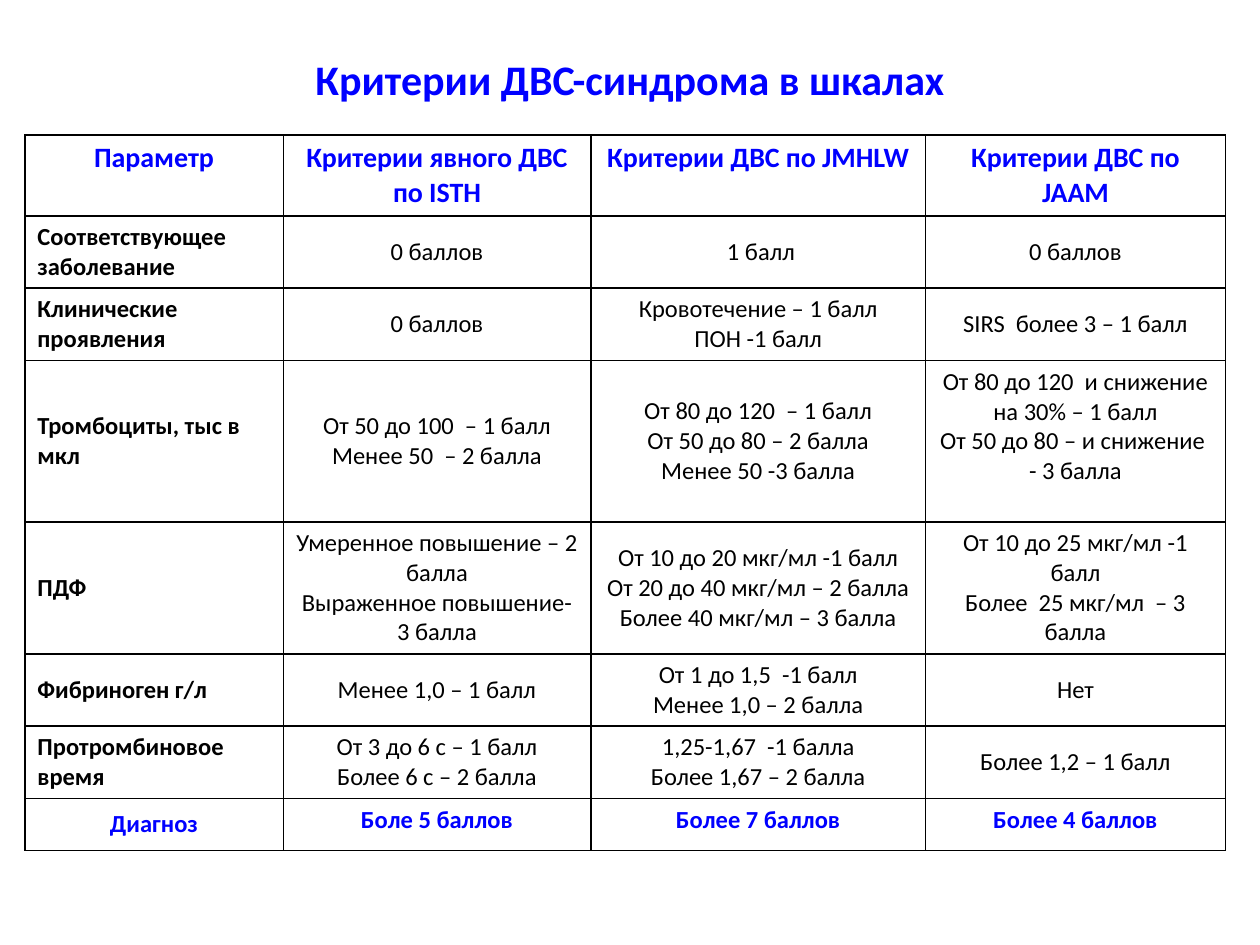
from lxml.etree import SubElement
from pptx import Presentation
from pptx.dml.color import RGBColor
from pptx.enum.text import MSO_ANCHOR as Anchor, PP_ALIGN as Align
from pptx.oxml.ns import qn
from pptx.util import Cm, Pt

BLUE = RGBColor(0x00, 0x00, 0xFF)
BLACK = RGBColor(0x00, 0x00, 0x00)

TITLE = "Критерии ДВС-синдрома в шкалах"
COLUMN_WIDTHS = [5.21, 6.2, 6.75, 6.04]
ROW_HEIGHTS = [1.63, 1.46, 1.46, 3.25, 2.66, 1.46, 1.46, 1.04]
# A line break inside a cell starts a new paragraph.
CRITERIA = [
    ["Параметр", "Критерии явного ДВС по ISTH", "Критерии ДВС по JMHLW",
     "Критерии ДВС по JAAM"],
    ["Соответствующее заболевание", "0 баллов", " 1 балл", "0 баллов"],
    ["Клинические проявления", "0 баллов",
     "Кровотечение – 1 балл\nПОН -1 балл", "SIRS  более 3 – 1 балл"],
    ["Тромбоциты, тыс в мкл",
     "От 50 до 100  – 1 балл\nМенее 50  – 2 балла",
     "От 80 до 120  – 1 балл\nОт 50 до 80 – 2 балла\nМенее 50 -3 балла",
     "От 80 до 120  и снижение на 30% – 1 балл\n"
     "От 50 до 80 – и снижение  - 3 балла"],
    ["ПДФ",
     "Умеренное повышение – 2 балла\nВыраженное повышение- 3 балла",
     "От 10 до 20 мкг/мл -1 балл\nОт 20 до 40 мкг/мл – 2 балла\n"
     "Более 40 мкг/мл – 3 балла",
     "От 10 до 25 мкг/мл -1 балл\nБолее  25 мкг/мл  – 3 балла"],
    ["Фибриноген г/л", "Менее 1,0 – 1 балл",
     "От 1 до 1,5  -1 балл\nМенее 1,0 – 2 балла", "Нет"],
    ["Протромбиновое время",
     "От 3 до 6 с – 1 балл\nБолее 6 с – 2 балла",
     "1,25-1,67  -1 балла\nБолее 1,67 – 2 балла", "Более 1,2 – 1 балл"],
    ["Диагноз", "Боле 5 баллов", "Более 7 баллов", "Более 4 баллов"],
]
HEADER, PLATELETS, DIAGNOSIS = 0, 3, len(CRITERIA) - 1
JAAM = 3


class SlideBuilder:
    font = "Calibri"
    border = Pt(1)

    def __init__(self, slide):
        self.slide = slide

    def add_text(self, frame, text, size, color=BLACK, bold=False, align=Align.CENTER):
        frame.word_wrap = True
        for index, line in enumerate(text.split("\n")):
            para = frame.add_paragraph() if index else frame.paragraphs[0]
            para.alignment = align
            span = para.add_run()
            span.text = line
            span.font.name = self.font
            span.font.size = Pt(size)
            span.font.bold = bold
            span.font.color.rgb = color

    def title(self, text, left, top, width, height):
        box = self.slide.shapes.add_textbox(Cm(left), Cm(top), Cm(width), Cm(height))
        box.text_frame.vertical_anchor = Anchor.MIDDLE
        self.add_text(box.text_frame, text, 24, BLUE, bold=True)

    def outline(self, cell):
        """Draw a black line on all four sides of the cell."""
        properties = cell._tc.get_or_add_tcPr()
        for side in ("a:lnL", "a:lnR", "a:lnT", "a:lnB"):
            line = SubElement(properties, qn(side), w=str(self.border))
            fill = SubElement(line, qn("a:solidFill"))
            SubElement(fill, qn("a:srgbClr"), val=str(BLACK))

    def table(self, rows, widths, heights, left, top):
        frame = self.slide.shapes.add_table(
            len(rows), len(widths), Cm(left), Cm(top), Cm(sum(widths)), Cm(sum(heights)))
        table = frame.table
        table.first_row = table.horz_banding = False
        for column, width in zip(table.columns, widths):
            column.width = Cm(width)
        for row, height in zip(table.rows, heights):
            row.height = Cm(height)
        for r, texts in enumerate(rows):
            for c, text in enumerate(texts):
                self.cell(table.cell(r, c), text, r, c)
        return table

    def cell(self, cell, text, row, column):
        accent = row in (HEADER, DIAGNOSIS)
        label = column == 0
        at_top = row == HEADER or (row == DIAGNOSIS and not label)
        self.outline(cell)
        cell.fill.background()
        cell.vertical_anchor = Anchor.TOP if at_top else Anchor.MIDDLE
        self.add_text(
            cell.text_frame, text,
            size=16 if row == HEADER else 14,
            color=BLUE if accent else BLACK,
            bold=accent or label,
            align=Align.LEFT if label and not accent else Align.CENTER)


def main():
    deck = Presentation()
    deck.slide_width, deck.slide_height = Cm(25.4), Cm(19.05)
    page = SlideBuilder(deck.slides.add_slide(deck.slide_layouts[6]))
    page.title(TITLE, 1.27, 0.82, 22.86, 1.55)
    table = page.table(CRITERIA, COLUMN_WIDTHS, ROW_HEIGHTS, 0.5, 2.72)
    # One line of room below the text lifts it to the top of its row.
    table.cell(PLATELETS, JAAM).margin_bottom = Cm(0.73)
    deck.save("out.pptx")


if __name__ == "__main__":
    main()
